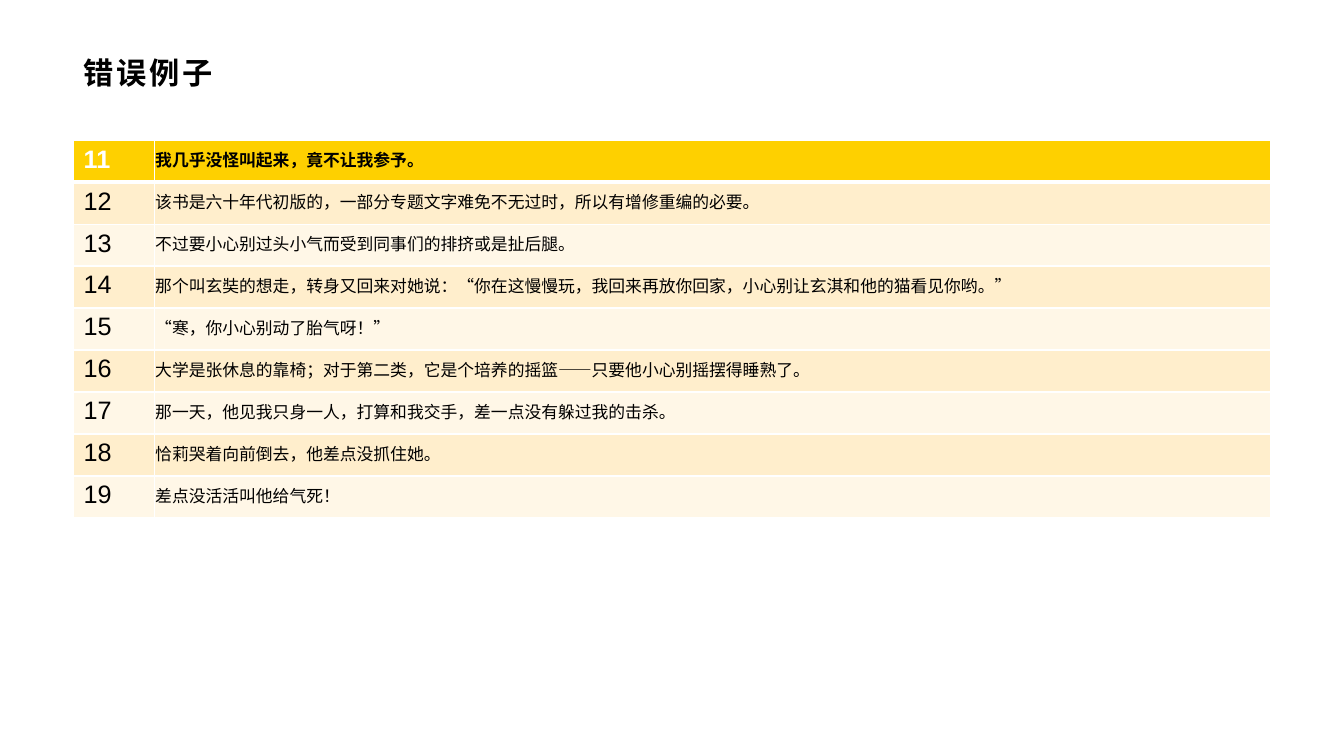
from lxml import etree
from pptx import Presentation
from pptx.dml.color import RGBColor
from pptx.enum.lang import MSO_LANGUAGE_ID
from pptx.enum.text import MSO_ANCHOR, PP_ALIGN
from pptx.oxml.ns import qn
from pptx.util import Inches, Pt

MIDDLE, TOP = MSO_ANCHOR.MIDDLE, MSO_ANCHOR.TOP
LEFT = PP_ALIGN.LEFT
CHINESE = MSO_LANGUAGE_ID.SIMPLIFIED_CHINESE
FONT = "Arial"
TITLE_ONLY = 5
COLORS = {
    "text": "000000",
    "white": "FFFFFF",
    "header": "FED000",
    "dark_band": "FFEECC",
    "light_band": "FFF7E7",
}
FIRST_NUMBER = 11
SENTENCES = [
    "我几乎没怪叫起来，竟不让我参予。",
    "该书是六十年代初版的，一部分专题文字难免不无过时，所以有增修重编的必要。",
    "不过要小心别过头小气而受到同事们的排挤或是扯后腿。",
    "那个叫玄奘的想走，转身又回来对她说：“你在这慢慢玩，我回来再放你回家，小心别让玄淇和他的猫看见你哟。”",
    "“寒，你小心别动了胎气呀！”",
    "大学是张休息的靠椅；对于第二类，它是个培养的摇篮——只要他小心别摇摆得睡熟了。",
    "那一天，他见我只身一人，打算和我交手，差一点没有躲过我的击杀。",
    "恰莉哭着向前倒去，他差点没抓住她。",
    "差点没活活叫他给气死！",
]


def rgb(name):
    return RGBColor.from_string(COLORS[name])


def format_text(tf, size, color, bold):
    p = tf.paragraphs[0]
    p.alignment = LEFT
    r = p.runs[0]
    r.font.name = FONT
    r.font.size = Pt(size)
    r.font.bold = bold
    r.font.color.rgb = rgb(color)
    r.font.language_id = CHINESE
    return r


def set_margins(target, left, top, right, bottom):
    target.margin_left, target.margin_top = Inches(left), Inches(top)
    target.margin_right, target.margin_bottom = Inches(right), Inches(bottom)


def set_borders(cell, widths):
    """Draw white cell borders; widths maps L, R, T and B to points."""
    tc_pr = cell._tc.get_or_add_tcPr()
    for side, width in widths.items():
        ln = etree.SubElement(tc_pr, qn(f"a:ln{side}"), w=str(Pt(width)))
        fill = etree.SubElement(ln, qn("a:solidFill"))
        etree.SubElement(fill, qn("a:srgbClr"), val=COLORS["white"])


def add_title(s, text):
    sp = s.shapes.title
    sp.left, sp.top = Inches(0.73), Inches(0.48)
    sp.width, sp.height = Inches(11.87), Inches(0.48)
    tf = sp.text_frame
    tf.text = text
    tf.word_wrap = True
    tf.vertical_anchor = MIDDLE
    set_margins(tf, 0.1, 0.05, 0.1, 0.05)
    r = format_text(tf, 21.6, "text", True)
    r.font._element.set("spc", "200")


def row_fill(row):
    if row == 0:
        return "header"
    return "dark_band" if row % 2 else "light_band"


def fill_cell(cell, text, row, size, color):
    cell.text = text
    format_text(cell.text_frame, size, color, row == 0)
    set_borders(cell, {"L": 1, "R": 1, "T": 3 if row == 1 else 1,
                       "B": 3 if row == 0 else 1})
    cell.fill.solid()
    cell.fill.fore_color.rgb = rgb(row_fill(row))


def add_sentence_table(s):
    rows = len(SENTENCES)
    table = s.shapes.add_table(rows, 2, Inches(0.73), Inches(1.39),
                               Inches(11.87), Inches(3.75)).table
    table.columns[0].width = Inches(0.8)
    table.columns[1].width = Inches(11.07)
    for row, sentence in enumerate(SENTENCES):
        table.rows[row].height = Inches(3.75 / rows)
        number_cell, sentence_cell = table.cell(row, 0), table.cell(row, 1)
        fill_cell(number_cell, str(FIRST_NUMBER + row), row, 18,
                  "text" if row else "white")
        number_cell.vertical_anchor = TOP
        set_margins(number_cell, 0.1, 0.05, 0.1, 0.05)
        fill_cell(sentence_cell, sentence, row, 12, "text")
        sentence_cell.vertical_anchor = MIDDLE
        set_margins(sentence_cell, 0.01, 0.01, 0.01, 0.05)


def main():
    prs = Presentation()
    prs.slide_width, prs.slide_height = Inches(13.33), Inches(7.5)
    s = prs.slides.add_slide(prs.slide_layouts[TITLE_ONLY])
    add_title(s, "错误例子")
    add_sentence_table(s)
    prs.save("out.pptx")


if __name__ == "__main__":
    main()
